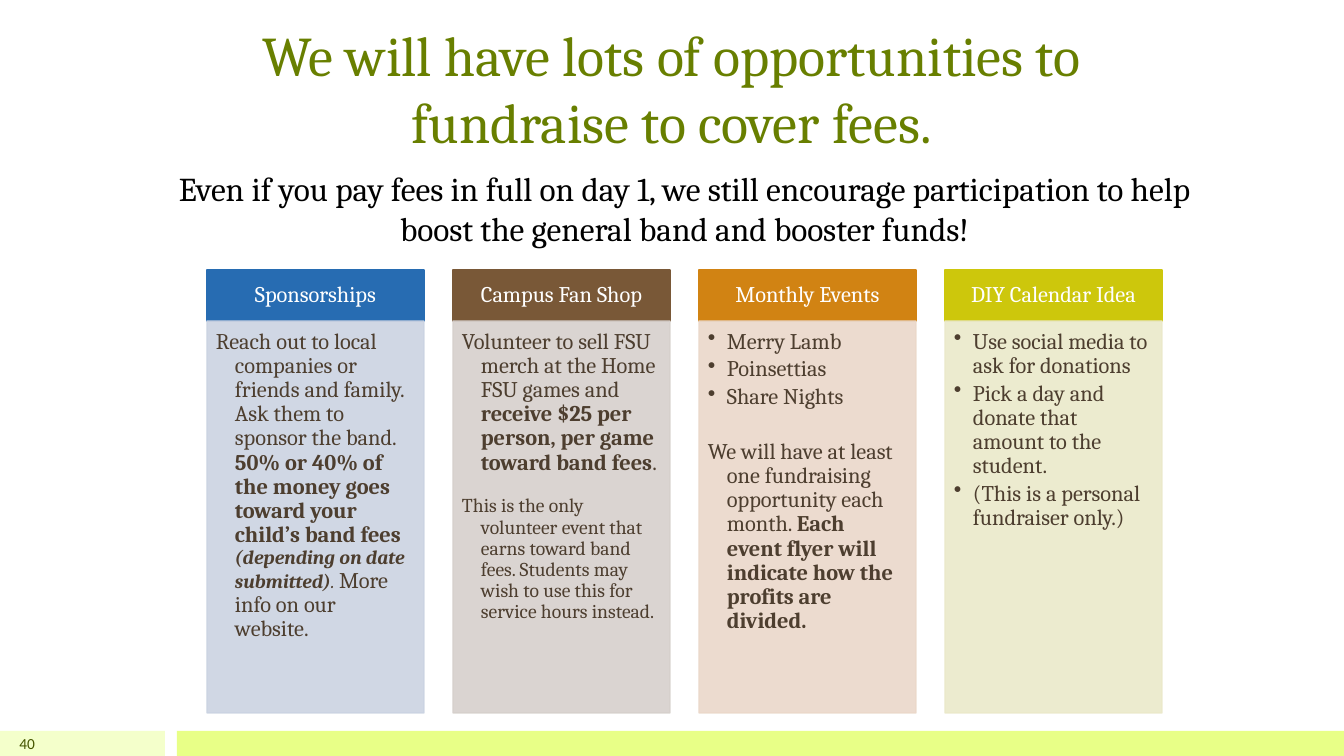
import pptx
import pptx.dml.color
import pptx.enum.shapes
import pptx.enum.text
import pptx.oxml
import pptx.oxml.ns
import pptx.util
from lxml import etree

PX = 914400 / 100.8
COLORS = {
    "title": "687F00", "black": "000000", "white": "FFFFFF", "body": "4D3E2F",
    "number": "455500", "footer_light": "F4FFCB", "footer": "E8FF87",
}
ALIGN = pptx.enum.text.PP_ALIGN
ANCHOR = pptx.enum.text.MSO_ANCHOR
qn = pptx.oxml.ns.qn

deck = pptx.Presentation()
deck.slide_width = round(1344 * PX)
deck.slide_height = round(756 * PX)
page = deck.slides.add_slide(deck.slide_layouts[6])


def add_box(bounds, fill=None, insets=(10, 5, 10, 5), anchor=ANCHOR.MIDDLE):
    """Add a rectangle, or a plain text box when no fill is given."""
    place = [round(value * PX) for value in bounds]
    if fill:
        box = page.shapes.add_shape(pptx.enum.shapes.MSO_SHAPE.RECTANGLE, *place)
        box.shadow.inherit = False
        box.fill.solid()
        box.fill.fore_color.rgb = pptx.dml.color.RGBColor.from_string(fill)
        box.line.color.rgb = pptx.dml.color.RGBColor.from_string(fill)
        box.line.width = pptx.util.Pt(1)
    else:
        box = page.shapes.add_textbox(*place)
    frame = box.text_frame
    frame.word_wrap = True
    frame.vertical_anchor = anchor
    frame.margin_left, frame.margin_top, frame.margin_right, frame.margin_bottom = [
        round(value * PX) for value in insets]
    return box


def style(para, size, color, align, font="Cambria"):
    para.alignment = align
    para.font.name = font
    if size:
        para.font.size = pptx.util.Pt(size)
    para.font.color.rgb = pptx.dml.color.RGBColor.from_string(color)


# Footer bars
for left, width, fill in [(0, 165, COLORS["footer_light"]), (177, 1167, COLORS["footer"])]:
    bar = add_box((left, 731, width, 25), fill)
    bar.line.fill.background()

# Title, subtitle and page number
for bounds, text, size, color, align, anchor, font in [
    ((155, 30, 1033, 130), "We will have lots of opportunities to fundraise to cover fees.",
     40, COLORS["title"], ALIGN.CENTER, ANCHOR.BOTTOM, "Cambria"),
    ((168, 162, 1033, 91), "Even if you pay fees in full on day 1, we still encourage participation "
     "to help boost the general band and booster funds!",
     23.8, COLORS["black"], ALIGN.CENTER, ANCHOR.BOTTOM, "Cambria"),
    ((0, 731, 45, 25), "40", 11, COLORS["number"], ALIGN.RIGHT, ANCHOR.MIDDLE, "Calibri"),
]:
    para = add_box(bounds, anchor=anchor).text_frame.paragraphs[0]
    para.text = text
    style(para, size, color, align, font)

# Columns: heading, heading fill, panel fill, paragraphs
# Paragraph: bulleted, space before, spans of (text, size, bold, italic)
columns = [
    ("Sponsorships", "276CB2", "CBD3E2", [
        (False, 0, [
            ("Reach out to local companies or friends and family. Ask them to sponsor the band. ",
             16, False, False),
            ("50% or 40% of the money goes toward your child’s band fees ", 16, True, False),
            ("(depending on date submitted)", 14, True, True),
            (". ", 14, False, True),
            ("More info on our website.", 16, False, False)]),
    ]),
    ("Campus Fan Shop", "795837", "D6D0CC", [
        (False, 0, [
            ("Volunteer to sell FSU merch at the Home FSU games and ", 16, False, False),
            ("receive $25 per person, per game toward band fees", 16, True, False),
            (".", 16, False, False)]),
        (False, 15, [
            ("This is the only volunteer event that earns toward band fees. Students may wish "
             "to use this for service hours instead.", 14, False, False)]),
    ]),
    ("Monthly Events", "D18313", "EBD8CA", [
        (True, 0, [("Merry Lamb", 16, False, False)]),
        (True, 2.4, [("Poinsettias", 16, False, False)]),
        (True, 2.4, [("Share Nights", 16, False, False)]),
        (False, 22, [
            ("We will have at least one fundraising opportunity each month. ", 16, False, False),
            ("Each event flyer will indicate how the profits are divided.", 16, True, False)]),
    ]),
    ("DIY Calendar Idea", "CDC70C", "EBE9CA", [
        (True, 0, [("Use social media to ask for donations", 16, False, False)]),
        (True, 2.4, [("Pick a day and donate that amount to the student.", 16, False, False)]),
        (True, 2.4, [("(This is a personal fundraiser only.)", 16, False, False)]),
    ]),
]

for index, (heading, head_fill, panel_fill, paragraphs) in enumerate(columns):
    left = 207 + 246 * index
    header = add_box((left, 270, 217, 51), head_fill, (12, 7, 12, 7))
    para = header.text_frame.paragraphs[0]
    para.text = heading
    para.line_spacing = 0.9
    style(para, 16, COLORS["white"], ALIGN.CENTER)

    panel = add_box((left, 321, 217, 392), panel_fill, (9, 9, 12, 14), ANCHOR.TOP)
    for color in panel._element.spPr.iter(qn("a:srgbClr")):
        etree.SubElement(color, qn("a:alpha"), val="90000")

    frame = panel.text_frame
    for number, (bulleted, space, spans) in enumerate(paragraphs):
        para = frame.add_paragraph() if number else frame.paragraphs[0]
        para.line_spacing = 0.9
        para.space_before = pptx.util.Pt(space)
        props = para._p.get_or_add_pPr()
        props.set("marL", str(round(19 * PX)))
        props.set("indent", str(round(-19 * PX)))
        if bulleted:
            etree.SubElement(props, qn("a:buChar"), char="•")
        else:
            etree.SubElement(props, qn("a:buNone"))
        sizes = {size for _, size, _, _ in spans}
        style(para, sizes.pop() if len(sizes) == 1 else None, COLORS["body"], ALIGN.LEFT)
        for text, size, bold, italic in spans:
            span = para.add_run()
            span.text = text
            span.font.size = pptx.util.Pt(size)
            span.font.bold = bold
            span.font.italic = italic

deck.save("out.pptx")
